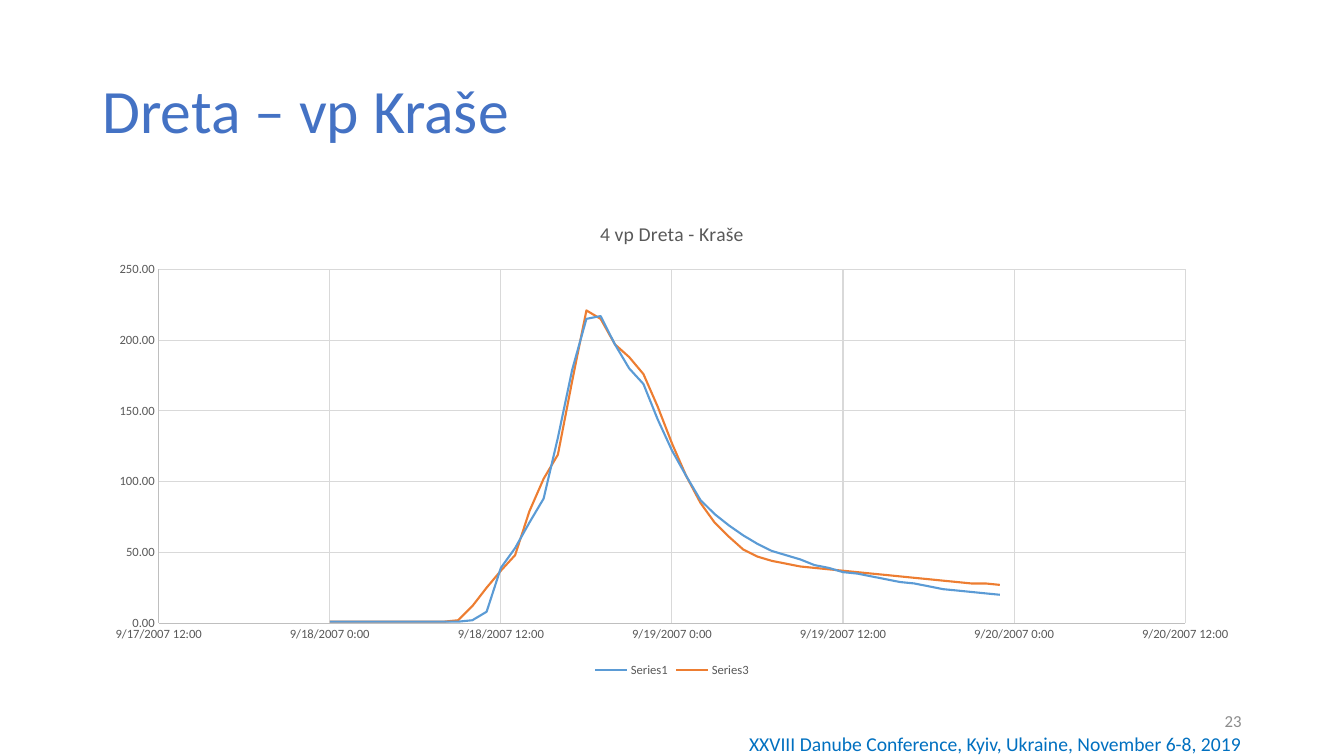
from pptx import Presentation
from pptx.chart.data import XyChartData
from pptx.dml.color import RGBColor
from pptx.enum.chart import XL_CHART_TYPE, XL_LEGEND_POSITION, XL_MARKER_STYLE, XL_TICK_MARK
from pptx.enum.text import MSO_ANCHOR, PP_ALIGN
from pptx.util import Cm, Pt

FONT = "Calibri"
TITLE_BLUE = RGBColor(0x44, 0x72, 0xC4)
FOOTER_BLUE = RGBColor(0x00, 0x70, 0xC0)
NUMBER_GREY = RGBColor(0x8C, 0x8C, 0x8C)
LABEL_GREY = RGBColor(0x59, 0x59, 0x59)
AXIS_GREY = RGBColor(0xBF, 0xBF, 0xBF)
GRID_GREY = RGBColor(0xD9, 0xD9, 0xD9)
SERIES_BLUE = RGBColor(0x5B, 0x9B, 0xD5)
SERIES_ORANGE = RGBColor(0xED, 0x7D, 0x31)

TEXTS = [
    ("Dreta – vp Kraše", (2.33, 1.01, 29.21, 3.68), 44, TITLE_BLUE,
     PP_ALIGN.LEFT, MSO_ANCHOR.MIDDLE, 0.9),
    ("23", (23.92, 17.65, 7.62, 1.01), 12, NUMBER_GREY,
     PP_ALIGN.RIGHT, MSO_ANCHOR.MIDDLE, 1.0),
    ("XXVIII Danube Conference, Kyiv, Ukraine, November 6-8, 2019",
     (18.44, 18.31, 13.1, 1.45), 14, FOOTER_BLUE,
     PP_ALIGN.RIGHT, MSO_ANCHOR.TOP, 1.0),
]

CHART_TITLE = "4 vp Dreta - Kraše"
CHART_BOX = (2.33, 5.08, 29.21, 12.09)
FIRST_DAY = 39343
DISCHARGES = [
    ("Series1", SERIES_BLUE, [
        1, 1, 1, 1, 1, 1, 1, 1, 1, 1, 2, 8, 39, 53, 71, 88,
        131, 179, 215, 217, 197, 180, 169, 144, 122, 104, 87, 77, 69, 62, 56, 51,
        48, 45, 41, 39, 36, 35, 33, 31, 29, 28, 26, 24, 23, 22, 21, 20]),
    ("Series3", SERIES_ORANGE, [
        1, 1, 1, 1, 1, 1, 1, 1, 1, 2, 12, 25, 37, 48, 79, 102,
        119, 171, 221, 215, 197, 188, 176, 153, 127, 104, 85, 71, 61, 52, 47, 44,
        42, 40, 39, 38, 37, 36, 35, 34, 33, 32, 31, 30, 29, 28, 28, 27]),
]


def style_font(font, size, color):
    font.name = FONT
    font.size = Pt(size)
    font.bold = False
    font.color.rgb = color


def style_line(line, color, width):
    line.color.rgb = color
    line.width = Pt(width)


def style_axis(axis, low, high, step, number_format):
    axis.minimum_scale, axis.maximum_scale, axis.major_unit = low, high, step
    axis.major_tick_mark = axis.minor_tick_mark = XL_TICK_MARK.NONE
    axis.has_major_gridlines = True
    style_line(axis.major_gridlines.format.line, GRID_GREY, 0.75)
    style_line(axis.format.line, AXIS_GREY, 0.75)
    axis.tick_labels.number_format = number_format
    axis.tick_labels.number_format_is_linked = False
    style_font(axis.tick_labels.font, 9, LABEL_GREY)


def add_text(page, text, place, size, color, align, anchor, spacing):
    box = page.shapes.add_textbox(*map(Cm, place))
    frame = box.text_frame
    frame.word_wrap = True
    frame.vertical_anchor = anchor
    frame.text = text
    para = frame.paragraphs[0]
    para.alignment = align
    para.line_spacing = spacing
    style_font(para.runs[0].font, size, color)


def add_hydrograph(page):
    data = XyChartData(number_format="0.00")
    for name, color, values in DISCHARGES:
        series = data.add_series(name)
        for hour, value in enumerate(values):
            series.add_data_point(FIRST_DAY + hour / 24, value)
    chart = page.shapes.add_chart(
        XL_CHART_TYPE.XY_SCATTER_LINES_NO_MARKERS, *map(Cm, CHART_BOX), data).chart
    style_font(chart.font, 10, LABEL_GREY)
    chart.has_title = True
    chart.chart_title.include_in_layout = False
    chart.chart_title.text_frame.text = CHART_TITLE
    title = chart.chart_title.text_frame.paragraphs[0]
    style_font(title.runs[0].font, 14, LABEL_GREY)
    chart.has_legend = True
    chart.legend.position = XL_LEGEND_POSITION.BOTTOM
    chart.legend.include_in_layout = False
    style_font(chart.legend.font, 9, LABEL_GREY)
    style_axis(chart.category_axis, FIRST_DAY - 0.5, FIRST_DAY + 2.5, 0.5, "m/d/yyyy h:mm")
    style_axis(chart.value_axis, 0, 250, 50, "0.00")
    plot = chart.plots[0]
    plot.vary_by_categories = False
    for series, (name, color, values) in zip(plot.series, DISCHARGES):
        series.smooth = False
        series.marker.style = XL_MARKER_STYLE.NONE
        style_line(series.format.line, color, 1.5)


def main():
    deck = Presentation()
    deck.slide_width, deck.slide_height = Cm(33.87), Cm(19.05)
    page = deck.slides.add_slide(deck.slide_layouts[6])
    add_hydrograph(page)
    for entry in TEXTS:
        add_text(page, *entry)
    deck.save("out.pptx")


if __name__ == "__main__":
    main()
